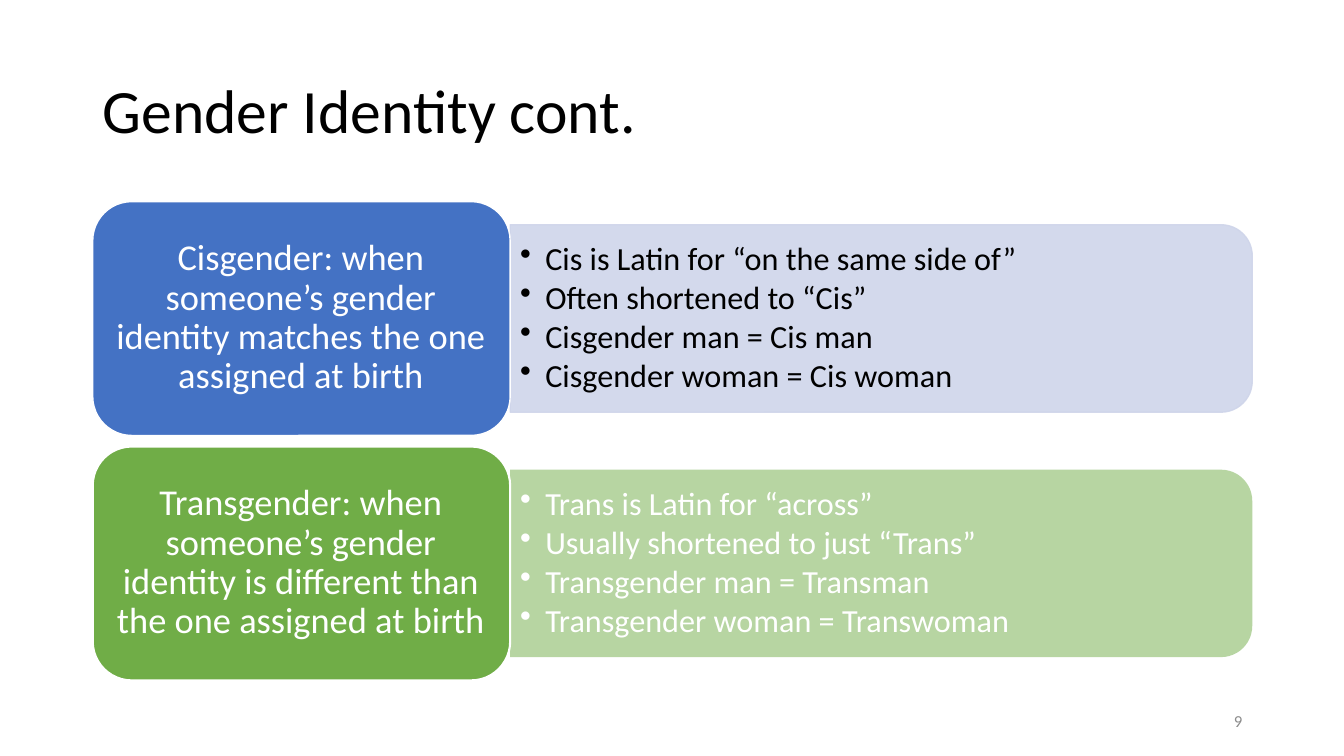
from pptx import Presentation
from pptx import util as u
from pptx.dml.color import RGBColor
from pptx.enum import shapes, text
from pptx.oxml import xmlchemy as xc
from lxml import etree

PX = 9144  # 100 px to the inch
NS = "{http://schemas.openxmlformats.org/drawingml/2006/main}"
ROWS = [
    ("Cisgender: when someone’s gender identity matches the one assigned at birth",
     ["Cis is Latin for “on the same side of”", "Often shortened to “Cis”",
      "Cisgender man = Cis man", "Cisgender woman = Cis woman"],
     "4472C4", 1, "CFD5EA", 90, True, "000000"),
    ("Transgender: when someone’s gender identity is different than the one assigned at birth",
     ["Trans is Latin for “across”", "Usually shortened to just “Trans”",
      "Transgender man = Transman", "Transgender woman = Transwoman"],
     "70AD47", 1.5, "70AD47", 50, False, "FFFFFF"),
]

deck = Presentation()
deck.slide_width, deck.slide_height = 1333 * PX, 750 * PX
slide = deck.slides.add_slide(deck.slide_layouts[6])


def paint(fill, color, alpha=100):
    fill.solid()
    fill.fore_color.rgb = RGBColor.from_string(color)
    if alpha < 100:
        tint = fill._xPr.find(f"{NS}solidFill")[0]
        etree.SubElement(tint, f"{NS}alpha", val=str(alpha * 1000))


def write(box, lines, size, color, align="LEFT", pitch=0.9, inset=10, bullet=False):
    frame = slide.shapes.add_textbox(*[n * PX for n in box]).text_frame
    frame.word_wrap = True
    frame.vertical_anchor = text.MSO_ANCHOR.MIDDLE
    frame.margin_left = frame.margin_right = inset * PX
    frame.text = "\n".join(lines)
    for para in frame.paragraphs:
        para.alignment = getattr(text.PP_ALIGN, align)
        para.line_spacing = pitch
        if bullet:
            para.space_after = u.Pt(3)
            props = para._p.get_or_add_pPr()
            props.set("marL", str(25 * PX))
            props.set("indent", str(-25 * PX))
            etree.SubElement(props, f"{NS}buChar", char="•")
        para.font.size = u.Pt(size)
        para.font.name = "Calibri"
        para.font.color.rgb = RGBColor.from_string(color)


# Title
write((92, 40, 1150, 145), ["Gender Identity cont."], 44, "000000")

# One row per term: panel with bullets, then the label block
for i, (term, facts, main, edge, pale, alpha, lined, ink) in enumerate(ROWS):
    top = 200 + 243 * i

    panel = slide.shapes.add_shape(shapes.MSO_SHAPE.ROUND_2_SAME_RECTANGLE,
                                   781 * PX, (top - 252) * PX, 186 * PX, 736 * PX)
    panel.rotation = 90
    panel.shadow.inherit = False
    paint(panel.fill, pale, alpha)
    if lined:
        paint(panel.line.fill, pale, alpha)
        panel.line.width = u.Pt(1)
    else:
        panel.line.fill.background()
    write((506, top + 32, 727, 168), facts, 23, ink, bullet=True)

    block = slide.shapes.add_shape(shapes.MSO_SHAPE.ROUNDED_RECTANGLE,
                                   92 * PX, top * PX, 414 * PX, 232 * PX)
    block.shadow.inherit = False
    paint(block.fill, main)
    paint(block.line.fill, "FFFFFF")
    block.line.width = u.Pt(edge)
    write((103, top + 11, 391, 209), [term], 26, "FFFFFF", "CENTER", inset=11)

# Slide number
write((942, 695, 300, 40), ["9"], 12, "8C8C8C", "RIGHT", pitch=1)

deck.save("out.pptx")
